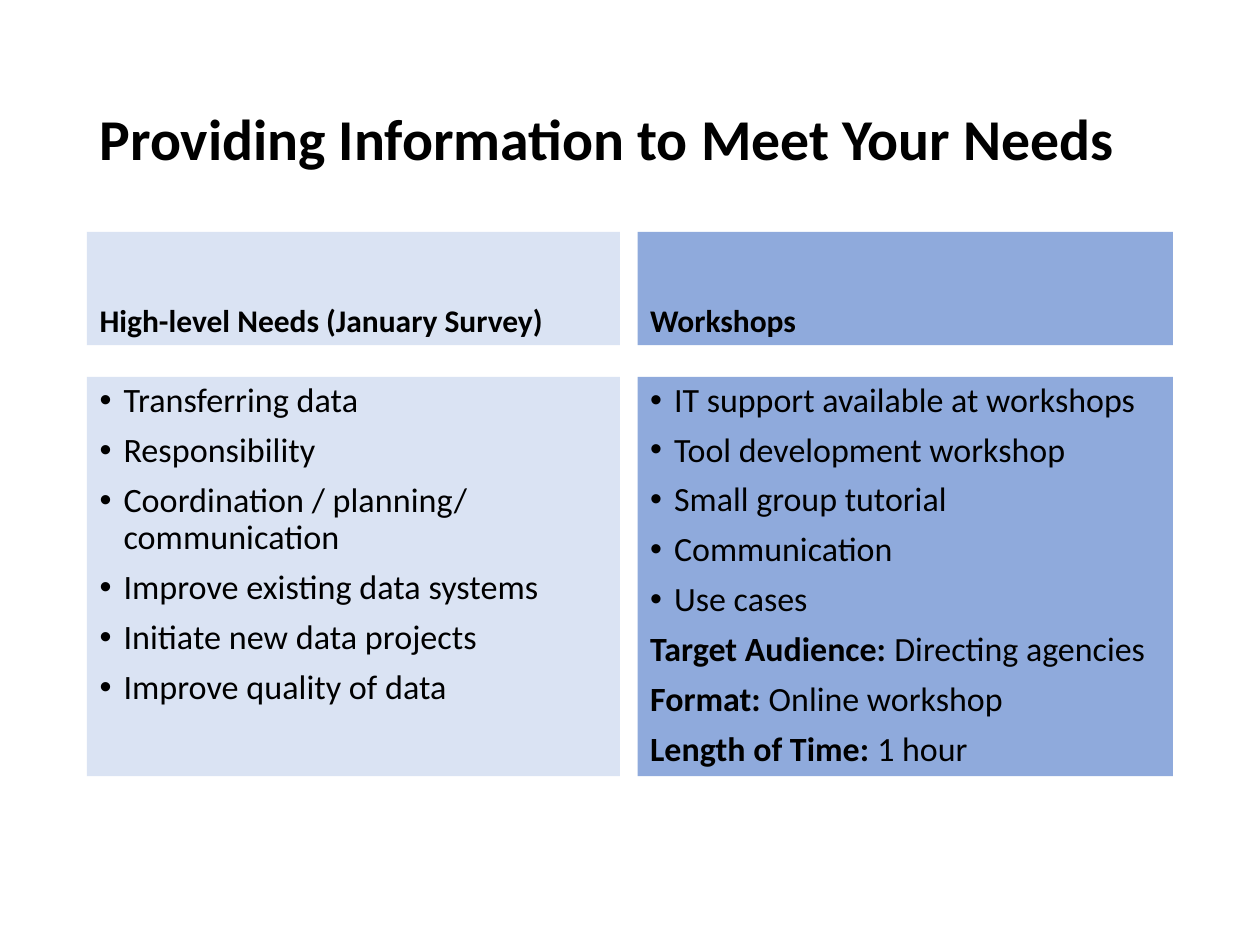
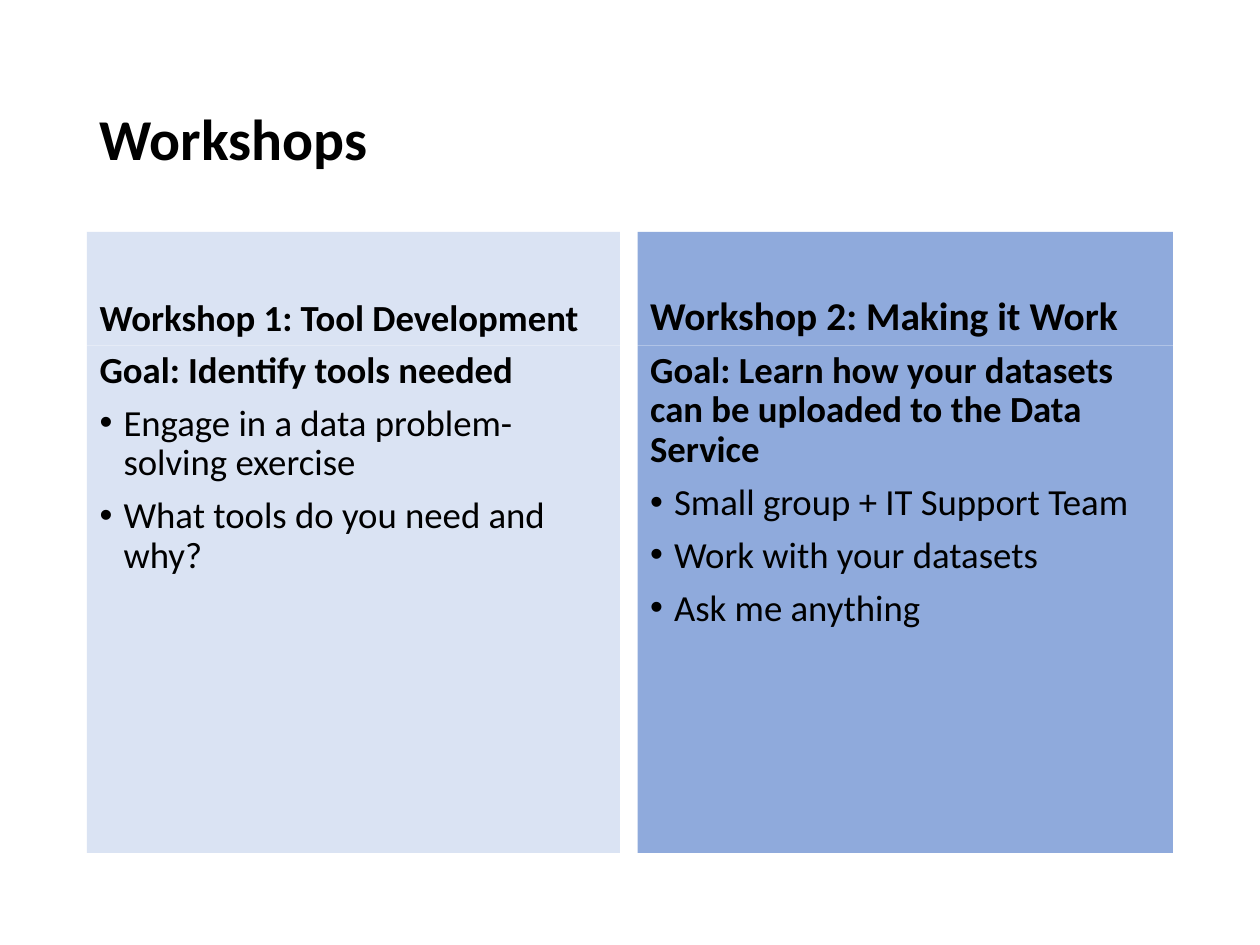
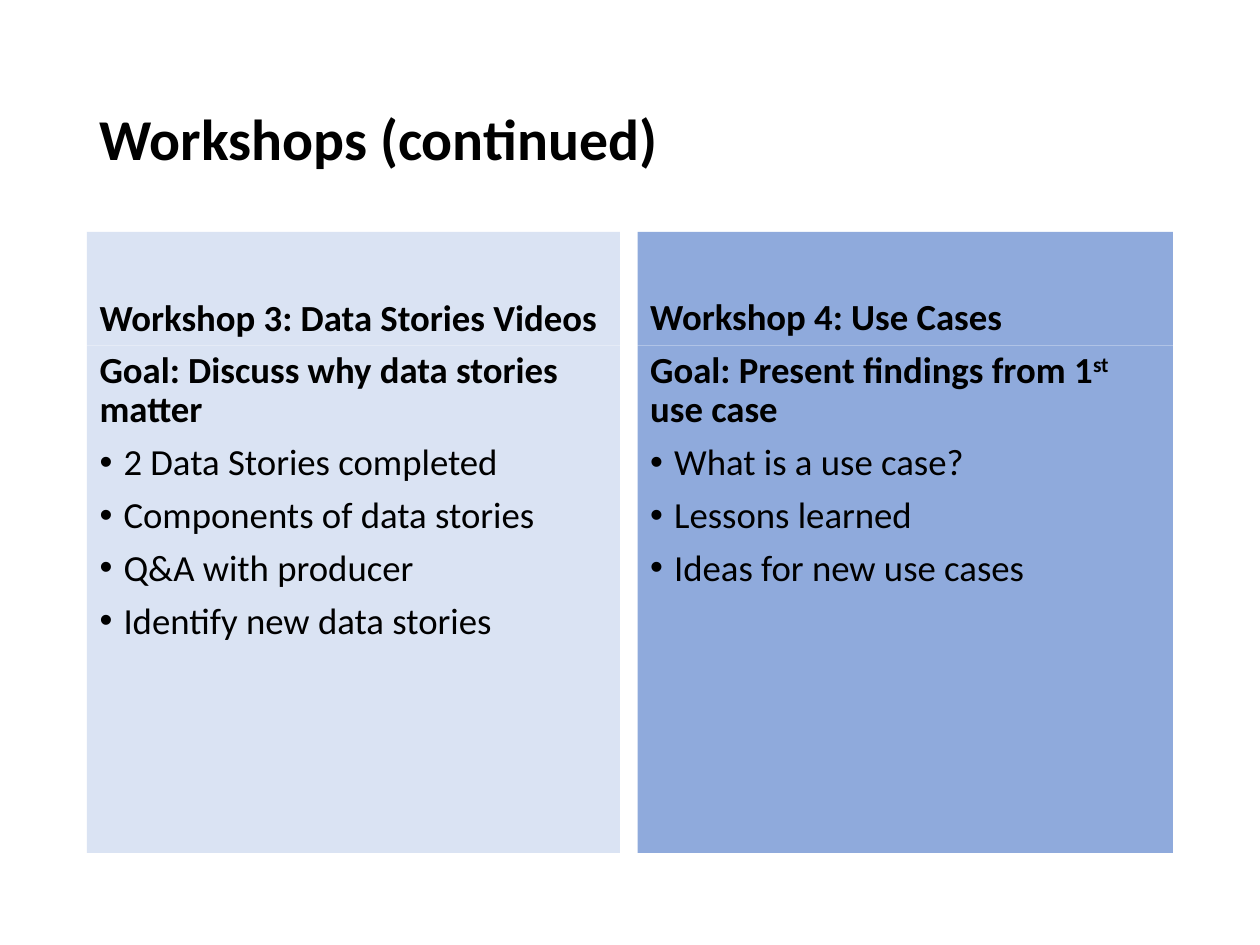
from lxml import etree
from pptx import Presentation
from pptx import util as u
from pptx.dml.color import RGBColor
from pptx.enum import text
from pptx.oxml.ns import qn

FONT = "Calibri"
COLORS = {"text": "000000", "left": "DAE3F3", "right": "8FAADC"}

# Content: a plain string is a bullet, a list of (text, style) runs is an
# unbulleted paragraph. Each heading is (text, size, line spacing).
SLIDES = [
    {
        "title": "Providing Information to Meet Your Needs",
        "body_box": (2.99, 3.17),
        "columns": [
            {
                "heading": ("High-level Needs (January Survey)", 18, 0.9),
                "size": 19.5,
                "body": [
                    "Transferring data",
                    "Responsibility",
                    "Coordination / planning/ communication",
                    "Improve existing data systems",
                    "Initiate new data projects",
                    "Improve quality of data",
                ],
            },
            {
                "heading": ("Workshops", 18, 0.9),
                "size": 19.4,
                "body": [
                    "IT support available at workshops",
                    "Tool development workshop",
                    "Small group tutorial",
                    "Communication",
                    "Use cases",
                    [("Target Audience: ", "bold"), ("Directing agencies", "")],
                    [("Format: ", "bold"), ("Online workshop", "")],
                    [("Length of Time: ", "bold"), ("1 hour", "")],
                ],
            },
        ],
    },
    {
        "title": "Workshops",
        "body_box": (2.74, 4.03),
        "columns": [
            {
                "heading": ("Workshop 1: Tool Development", 21, 1.1),
                "size": 21,
                "body": [
                    [("Goal: Identify tools needed", "bold")],
                    "Engage in a data problem-solving exercise",
                    "What tools do you need and why?",
                ],
            },
            {
                "heading": ("Workshop 2: Making it Work", 22.5, 0.9),
                "size": 21,
                "body": [
                    [("Goal: Learn how your datasets can be uploaded to the Data Service", "bold")],
                    "Small group + IT Support Team",
                    "Work with your datasets",
                    "Ask me anything",
                ],
            },
        ],
    },
    {
        "title": "Workshops (continued)",
        "body_box": (2.74, 4.03),
        "columns": [
            {
                "heading": ("Workshop 3: Data Stories Videos", 21, 1.0),
                "size": 21,
                "body": [
                    [("Goal: Discuss why data stories matter", "bold")],
                    "2 Data Stories completed",
                    "Components of data stories",
                    "Q&A with producer",
                    "Identify new data stories",
                ],
            },
            {
                "heading": ("Workshop 4: Use Cases", 21, 0.9),
                "size": 21,
                "body": [
                    [("Goal: Present findings from 1", "bold"), ("st", "bold super"),
                     (" use case", "bold")],
                    "What is a use case?",
                    "Lessons learned",
                    "Ideas for new use cases",
                ],
            },
        ],
    },
]

# Shared geometry, in inches
TITLE_BOX = (0.69, 0.4, 8.62, 1.45)
HEADING_TOP, HEADING_HEIGHT = 1.84, 0.9
COLUMNS = [("left", 0.69, 4.23), ("right", 5.06, 4.25)]  # colour, left, width
INDENT = 0.19
COMPARISON_LAYOUT = 4


def set_bullet(p, on):
    pPr = p._p.get_or_add_pPr()
    indent = u.Inches(INDENT) if on else 0
    pPr.set("marL", str(indent))
    pPr.set("indent", str(-indent))
    if on:
        etree.SubElement(pPr, qn("a:buFont")).set("typeface", "Arial")
        etree.SubElement(pPr, qn("a:buChar")).set("char", "•")
    else:
        etree.SubElement(pPr, qn("a:buNone"))


def fill_placeholder(sp, box, paragraphs, size, anchor, color=None, spacing=0.9):
    sp.left, sp.top, sp.width, sp.height = map(u.Inches, box)
    if color:
        sp.fill.solid()
        sp.fill.fore_color.rgb = RGBColor.from_string(COLORS[color])
    tf = sp.text_frame
    tf.word_wrap = True
    tf.auto_size = text.MSO_AUTO_SIZE.NONE
    tf.vertical_anchor = anchor
    for i, content in enumerate(paragraphs):
        p = tf.add_paragraph() if i else tf.paragraphs[0]
        is_bullet = isinstance(content, str)
        set_bullet(p, is_bullet)
        p.alignment = text.PP_ALIGN.LEFT
        p.line_spacing = spacing
        p.space_before = u.Pt(7.5 if i else 0)
        for words, style in [(content, "")] if is_bullet else content:
            r = p.add_run()
            r.text = words
            r.font.name = FONT
            r.font.size = u.Pt(size)
            r.font.bold = "bold" in style
            r.font.color.rgb = RGBColor.from_string(COLORS["text"])
            if "super" in style:
                r._r.get_or_add_rPr().set("baseline", "30000")


def add_comparison(prs, content):
    slide = prs.slides.add_slide(prs.slide_layouts[COMPARISON_LAYOUT])
    title, *parts = slide.placeholders
    fill_placeholder(title, TITLE_BOX, [[(content["title"], "bold")]], 33,
                     text.MSO_ANCHOR.MIDDLE)
    # Each column is a heading placeholder followed by its body placeholder
    body_top, body_height = content["body_box"]
    for (color, left, width), column, heading, body in zip(
            COLUMNS, content["columns"], parts[::2], parts[1::2]):
        words, size, spacing = column["heading"]
        fill_placeholder(heading, (left, HEADING_TOP, width, HEADING_HEIGHT),
                         [[(words, "bold")]], size, text.MSO_ANCHOR.BOTTOM,
                         color, spacing)
        fill_placeholder(body, (left, body_top, width, body_height),
                         column["body"], column["size"], text.MSO_ANCHOR.TOP, color)


def main():
    prs = Presentation()
    prs.slide_width, prs.slide_height = u.Inches(10), u.Inches(7.5)
    for content in SLIDES:
        add_comparison(prs, content)
    prs.save("out.pptx")


if __name__ == "__main__":
    main()
